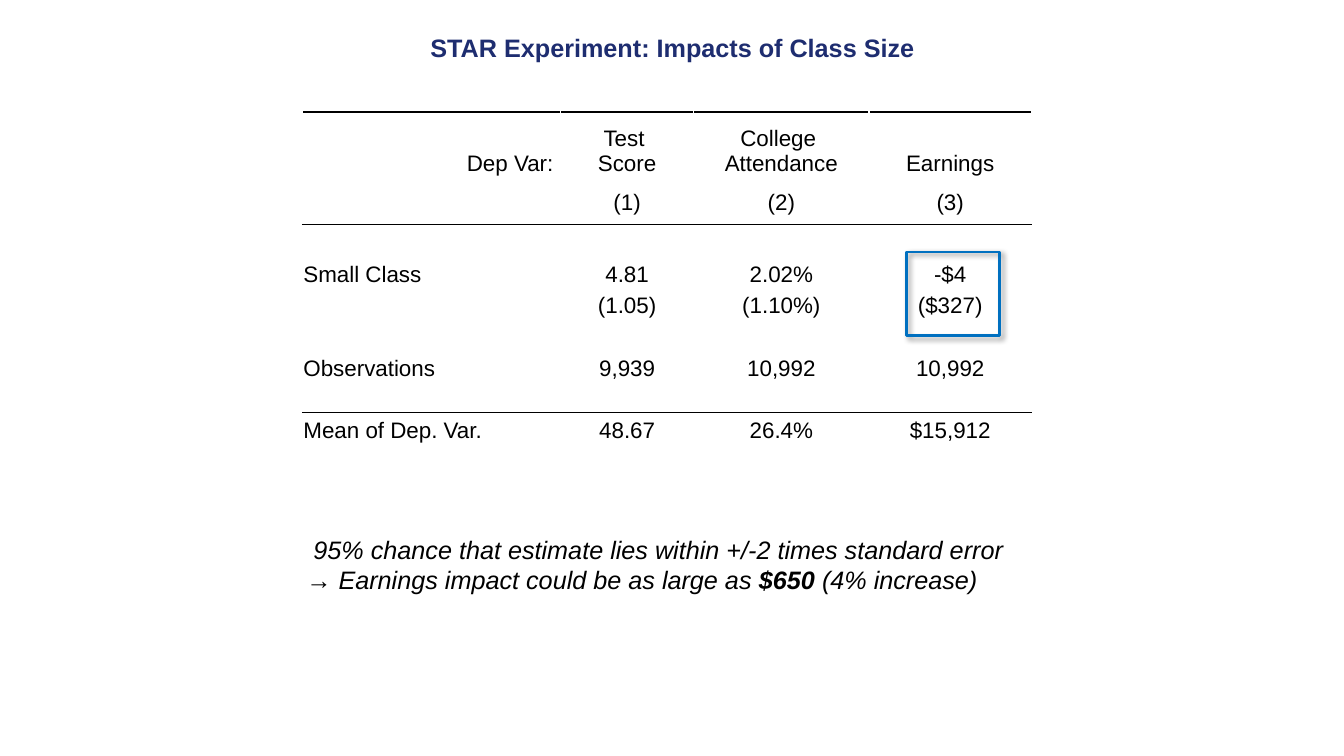
from lxml import etree
from pptx import Presentation
from pptx.dml.color import RGBColor
from pptx.enum import shapes, text
from pptx.oxml import parse_xml
from pptx.oxml.ns import nsdecls, qn
from pptx.util import Inches, Pt

FONT = "Arial"
BLACK = "000000"
COLUMN_WIDTHS = [2.56, 1.32, 1.74, 1.61]
ROW_HEIGHTS = [0.64, 0.13, 0.35] + [0.31] * 7
ROWS = [
    ["Dep Var: ", "Test \nScore", "College \nAttendance", "Earnings"],
    [""] * 4,
    ["", "(1)", "(2)", "(3)"],
    [""] * 4,
    ["Small Class", "4.81", "2.02%", "-$4"],
    ["", "(1.05)", "(1.10%)", "($327)"],
    [""] * 4,
    ["Observations", "9,939", "10,992", "10,992"],
    [""] * 4,
    ["Mean of Dep. Var.", "48.67", "26.4%", "$15,912"],
]
HEADER_ROW, NUMBER_ROW = 0, 2
# Row index -> (border side, points); a rule between rows belongs to both
RULES = {0: ("T", 1.5), 2: ("B", 1), 3: ("T", 1), 8: ("B", 1), 9: ("T", 1)}


def rgb(value):
    return RGBColor.from_string(value)


def style_span(span, size, color=BLACK, bold=False, italic=False):
    font = span.font
    font.name, font.size, font.bold, font.italic = FONT, Pt(size), bold, italic
    font.color.rgb = rgb(color)


def add_title(page, left, top, width, height):
    frame = page.shapes.add_textbox(
        Inches(left), Inches(top), Inches(width), Inches(height)).text_frame
    frame.word_wrap = True
    frame.vertical_anchor = text.MSO_ANCHOR.MIDDLE
    frame.margin_top = frame.margin_bottom = 0
    frame.text = "STAR Experiment: Impacts of Class Size"
    para = frame.paragraphs[0]
    para.alignment = text.PP_ALIGN.CENTER
    style_span(para.runs[0], 18, "1E2D70", bold=True)


def add_rule(cell, side, points):
    """Draw a black border on the top (T) or bottom (B) of a cell."""
    border = parse_xml(
        f'<a:ln{side} {nsdecls("a")} w="{Pt(points)}"><a:solidFill>'
        f'<a:srgbClr val="{BLACK}"/></a:solidFill></a:ln{side}>')
    cell._tc.get_or_add_tcPr().insert(0, border)


def fill_cell(cell, content, row, column):
    cell.fill.background()
    cell.margin_left = cell.margin_right = cell.margin_top = Inches(0.01)
    cell.margin_bottom = 0
    cell.vertical_anchor = (text.MSO_ANCHOR.TOP if row == NUMBER_ROW
                            else text.MSO_ANCHOR.BOTTOM)
    cell.text = content
    if column:
        alignment = text.PP_ALIGN.CENTER
    elif row == HEADER_ROW:
        alignment = text.PP_ALIGN.RIGHT
    else:
        alignment = text.PP_ALIGN.LEFT
    for para in cell.text_frame.paragraphs:
        para.alignment = alignment
        for span in para.runs:
            style_span(span, 16)
        if not para.runs:
            # Small empty text lets thin rows keep their height
            etree.SubElement(para._p, qn("a:endParaRPr"), sz="400")
    if row in RULES:
        add_rule(cell, *RULES[row])


def add_results_table(page, left, top):
    table = page.shapes.add_table(
        len(ROWS), len(COLUMN_WIDTHS), Inches(left), Inches(top),
        Inches(sum(COLUMN_WIDTHS)), Inches(sum(ROW_HEIGHTS))).table
    table.first_row = table.horz_banding = False
    for column, width in zip(table.columns, COLUMN_WIDTHS):
        column.width = Inches(width)
    for row, height in zip(table.rows, ROW_HEIGHTS):
        row.height = Inches(height)
    for row, contents in enumerate(ROWS):
        for column, content in enumerate(contents):
            fill_cell(table.cell(row, column), content, row, column)


def add_highlight(page, left, top, width, height):
    """Frame the earnings estimate."""
    frame = page.shapes.add_shape(
        shapes.MSO_SHAPE.RECTANGLE,
        Inches(left), Inches(top), Inches(width), Inches(height))
    frame.fill.background()
    frame.line.color.rgb = rgb("0070C0")
    frame.line.width = Pt(2)
    frame.shadow.inherit = False
    effects = frame._element.spPr.find(qn("a:effectLst"))
    effects.append(parse_xml(
        f'<a:outerShdw {nsdecls("a")} blurRad="{Pt(4)}" dist="{Pt(3)}" '
        f'dir="{45 * 60000}" algn="tl" rotWithShape="0"><a:srgbClr val="{BLACK}">'
        '<a:alpha val="40000"/></a:srgbClr></a:outerShdw>'))


def add_conclusion(page, left, top, width, height):
    frame = page.shapes.add_textbox(
        Inches(left), Inches(top), Inches(width), Inches(height)).text_frame
    frame.word_wrap = False
    frame.auto_size = text.MSO_AUTO_SIZE.SHAPE_TO_FIT_TEXT
    frame.text = " 95% chance that estimate lies within +/-2 times standard error"
    style_span(frame.paragraphs[0].runs[0], 18, italic=True)
    para = frame.add_paragraph()
    for words, bold in [("→ Earnings impact could be as large as ", False),
                        ("$650 ", True), ("(4% increase)", False)]:
        span = para.add_run()
        span.text = words
        style_span(span, 18, bold=bold, italic=True)


def main():
    deck = Presentation()
    deck.slide_width, deck.slide_height = Inches(13.33), Inches(7.5)
    page = deck.slides.add_slide(deck.slide_layouts[6])
    add_title(page, 0.67, 0.33, 12, 0.28)
    add_results_table(page, 3, 1.11)
    add_highlight(page, 8.99, 2.5, 0.92, 0.83)
    add_conclusion(page, 2.94, 5.25, 7.18, 0.71)
    deck.save("out.pptx")


if __name__ == "__main__":
    main()
